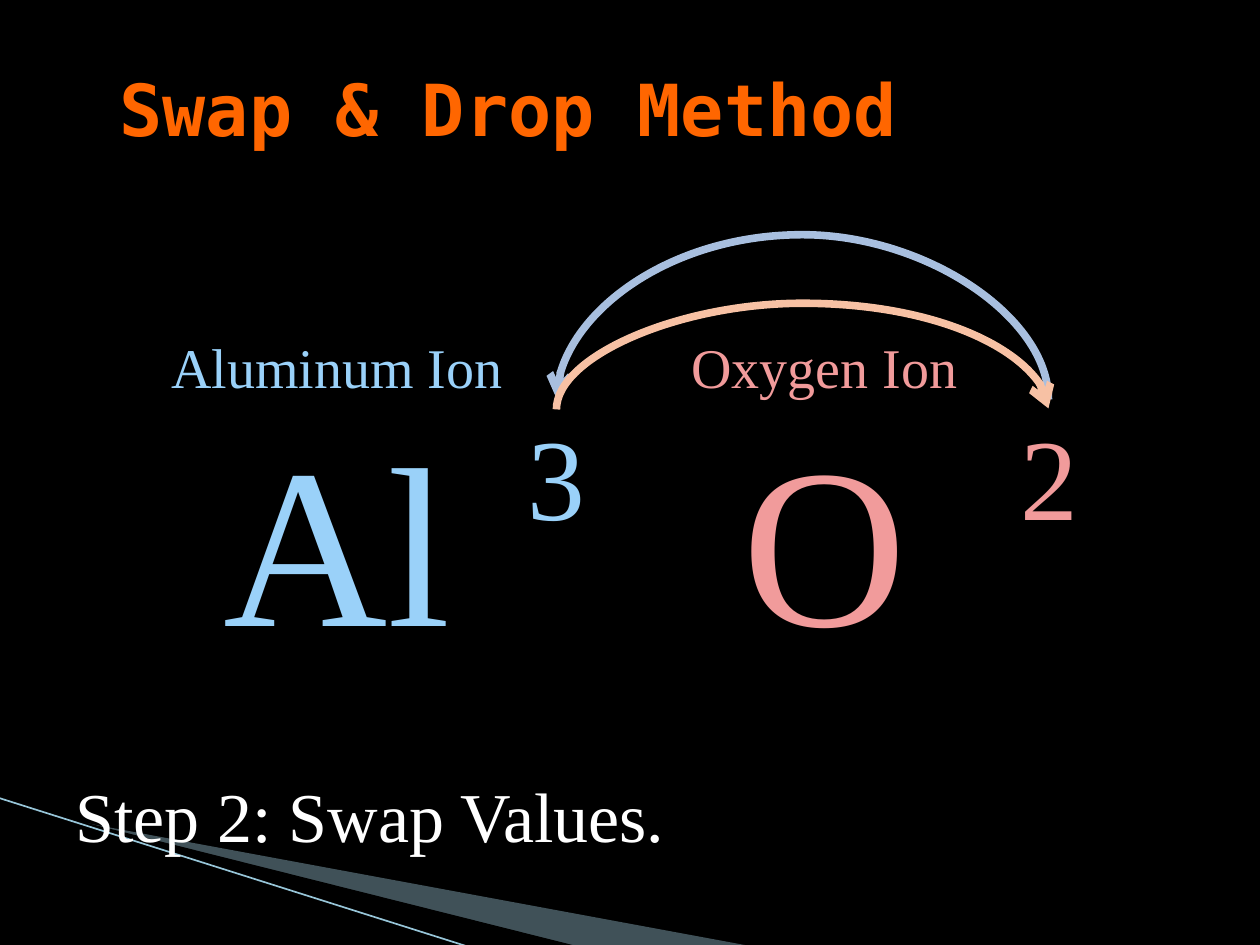
from dataclasses import dataclass

from lxml.etree import SubElement
from pptx import Presentation
from pptx.dml.color import RGBColor
from pptx.enum.shapes import MSO_CONNECTOR
from pptx.enum.text import MSO_ANCHOR, MSO_AUTO_SIZE, PP_ALIGN
from pptx.oxml.ns import qn
from pptx.util import Pt

PX = 7257  # EMU in one px, at 126 px to the inch


@dataclass(frozen=True)
class Theme:
    back: str = "000000"
    title: str = "FF6600"
    step: str = "FFFFFF"
    metal: str = "9AD1F9"
    gas: str = "F19B9B"
    wedge: str = "A0CBDC"
    edge: str = "97C5D8"
    left_arc: str = "A8BFDF"
    right_arc: str = "F7C1A4"
    mono: str = "DejaVu Sans Mono"
    serif: str = "Times New Roman"
    title_size: int = 41
    step_size: int = 40
    name_size: int = 32
    symbol_size: int = 130
    charge_size: int = 66


theme = Theme()


def write(frame, text, size, color, font=theme.serif, bold=False,
          align=PP_ALIGN.LEFT, more=False):
    """Fill the first paragraph, or a new one when more is True."""
    line = frame.add_paragraph() if more else frame.paragraphs[0]
    line.alignment = align
    run = line.add_run()
    run.text = text
    run.font.name = font
    run.font.size = Pt(size)
    run.font.bold = bold
    run.font.color.rgb = RGBColor.from_string(color)


def add_box(left, top, width, height):
    """Add an unwrapped text box and return its text frame."""
    box = slide.shapes.add_textbox(left * PX, top * PX, width * PX, height * PX)
    frame = box.text_frame
    frame.word_wrap = False
    frame.auto_size = MSO_AUTO_SIZE.SHAPE_TO_FIT_TEXT
    return frame


deck = Presentation()
deck.slide_width, deck.slide_height = 1260 * PX, 945 * PX
slide = deck.slides.add_slide(deck.slide_layouts[5])
shapes = slide.shapes
slide.background.fill.solid()
slide.background.fill.fore_color.rgb = RGBColor.from_string(theme.back)

# Corner decoration
wedges = [
    ([(69, 820), (750, 946), (575, 946), (69, 819)], theme.wedge, 40),
    ([(67, 818), (576, 946), (469, 947), (68, 819)], theme.back, 100),
]
for points, color, alpha in wedges:
    path = shapes.build_freeform(*points[0], scale=PX)
    path.add_line_segments(points[1:], close=True)
    wedge = path.convert_to_shape()
    wedge.shadow.inherit = False
    wedge.line.fill.background()
    wedge.fill.solid()
    wedge.fill.fore_color.rgb = RGBColor.from_string(color)
    if alpha < 100:
        tint = next(wedge._element.spPr.iter(qn("a:srgbClr")))
        SubElement(tint, qn("a:alpha"), val=str(alpha * 1000))

edge = shapes.add_connector(MSO_CONNECTOR.STRAIGHT, -1 * PX, 798 * PX, 469 * PX, 947 * PX)
edge.line.width = Pt(0.95)
edge.line.color.rgb = RGBColor.from_string(theme.edge)
SubElement(edge._element.spPr, qn("a:effectLst"))

# Title and step
title = shapes.title
title.left, title.top, title.width, title.height = 107 * PX, 15 * PX, 1045 * PX, 185 * PX
title.text_frame.vertical_anchor = MSO_ANCHOR.MIDDLE
title.text_frame.auto_size = MSO_AUTO_SIZE.NONE
write(title.text_frame, "Swap & Drop Method", theme.title_size, theme.title,
      font=theme.mono, bold=True)
write(add_box(63, 766, 621, 97), "Step 2: Swap Values.", theme.step_size, theme.step)

# Swap arcs: one px wide, 492 px tall, then turned on their side;
# the bend lifts the middle of the curve above its ends.
low, high = 802 + 0, 803
arcs = [
    (low, high, 399, 270, 166, theme.left_arc),
    (high, low, 409, 90, 107, theme.right_arc),
]
for start, end, level, turn, bend, color in arcs:
    arc = shapes.add_connector(MSO_CONNECTOR.CURVE, start * PX, (level + 246) * PX,
                               end * PX, (level - 246) * PX)
    arc.rotation = turn
    arc.line.width = Pt(4.33)
    arc.line.color.rgb = RGBColor.from_string(color)
    props = arc._element.spPr
    SubElement(props.find(qn("a:ln")), qn("a:tailEnd"), type="arrow")
    SubElement(props, qn("a:effectLst"))
    guides = next(props.iter(qn("a:avLst")))
    SubElement(guides, qn("a:gd"), name="adj1", fmla=f"val {bend * 100000}")

# Ions with their charges
ions = [
    ("Aluminum Ion", "Al", "3", theme.metal, 157, 360, 515),
    ("Oxygen Ion", "O", "2", theme.gas, 678, 293, 1008),
]
for name, symbol, charge, color, left, width, side in ions:
    frame = add_box(left, 326, width, 357)
    write(frame, name, theme.name_size, color, align=PP_ALIGN.CENTER)
    write(frame, symbol, theme.symbol_size, color, align=PP_ALIGN.CENTER, more=True)
    write(add_box(side, 399, 83, 152), charge, theme.charge_size, color)

deck.save("out.pptx")
